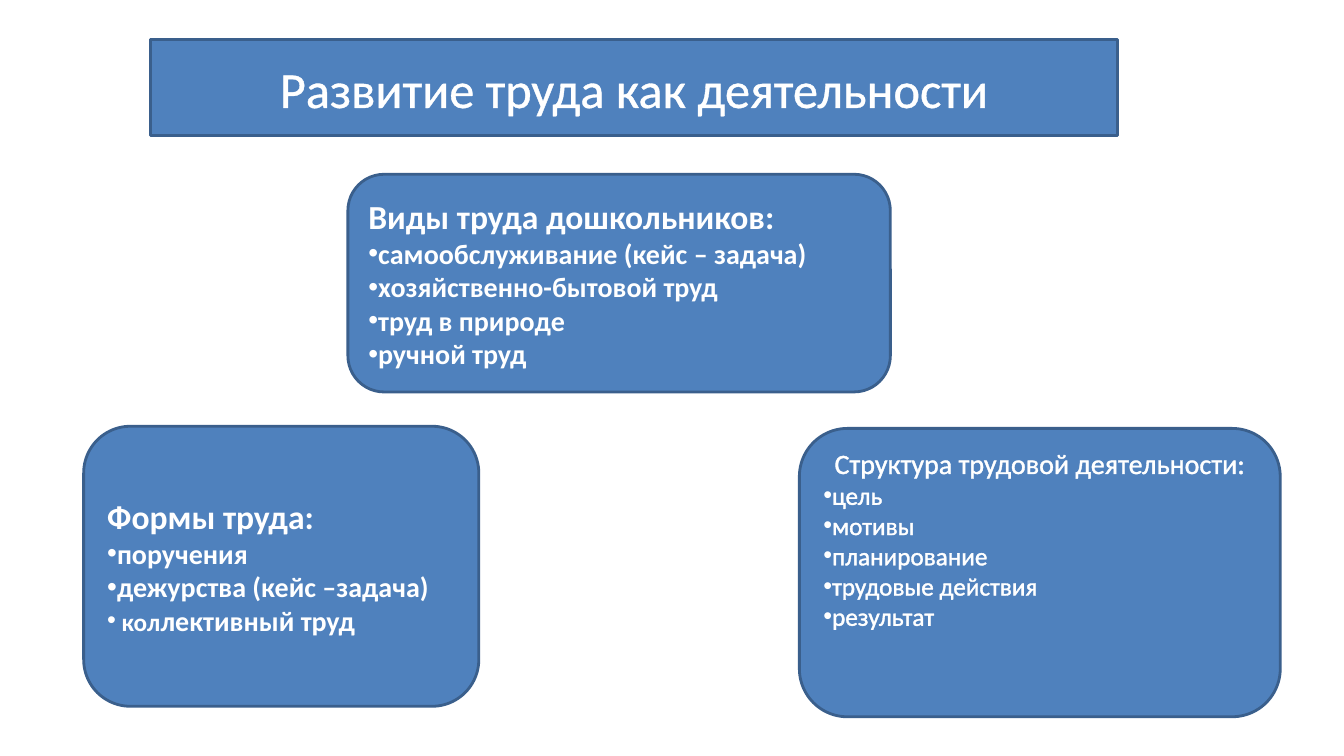
from dataclasses import dataclass

from lxml.etree import SubElement
from pptx import Presentation
from pptx.dml.color import RGBColor
from pptx.enum.shapes import MSO_SHAPE
from pptx.enum.text import MSO_ANCHOR, MSO_AUTO_SIZE, PP_ALIGN
from pptx.oxml import parse_xml
from pptx.oxml.ns import nsdecls, qn
from pptx.util import Pt


@dataclass(frozen=True)
class Theme:
    font: str = "Calibri"
    fill: RGBColor = RGBColor(0x4F, 0x81, 0xBD)
    line: RGBColor = RGBColor(0x3A, 0x5F, 0x8C)
    text: RGBColor = RGBColor(0xFF, 0xFF, 0xFF)
    title: int = 36
    heading: int = 24
    body: int = 20
    small: int = 18


THEME = Theme()


def paint(sp):
    sp.fill.solid()
    sp.fill.fore_color.rgb = THEME.fill
    sp.line.color.rgb = THEME.line
    sp.line.width = Pt(2)


def style(p, size, bold=False, outlined=False, align=PP_ALIGN.LEFT):
    p.alignment = align
    font = p.font
    font.name, font.size, font.bold = THEME.font, Pt(size), bold
    font.color.rgb = THEME.text
    if outlined:
        ln = parse_xml(
            f'<a:ln {nsdecls("a")} w="{Pt(1.45)}"><a:solidFill>'
            f'<a:srgbClr val="{THEME.text}"/></a:solidFill></a:ln>')
        p._p.pPr.find(qn("a:defRPr")).insert(0, ln)


def add_bullet(p):
    pPr = p._p.get_or_add_pPr()
    pPr.insert(0, parse_xml(f'<a:buFont {nsdecls("a")} typeface="Arial"/>'))
    pPr.insert(1, parse_xml(f'<a:buChar {nsdecls("a")} char="•"/>'))


def set_title(s, text, left, top, width, height):
    sp = s.shapes.title
    sp.left, sp.top, sp.width, sp.height = map(Pt, (left, top, width, height))
    geom = SubElement(sp._element.spPr, qn("a:prstGeom"), prst="roundRect")
    SubElement(geom, qn("a:avLst"))
    paint(sp)
    tf = sp.text_frame
    tf.text = text
    tf.word_wrap = True
    tf.auto_size = MSO_AUTO_SIZE.NONE
    tf.vertical_anchor = MSO_ANCHOR.MIDDLE
    style(tf.paragraphs[0], THEME.title, outlined=True, align=PP_ALIGN.CENTER)


def add_card(s, box, heading, items, heading_size, item_size, bold=True,
             outlined=False, align=PP_ALIGN.LEFT, bottom=3.6):
    """An item is a string or a list of (text, size) runs."""
    sp = s.shapes.add_shape(MSO_SHAPE.FLOWCHART_ALTERNATE_PROCESS, *map(Pt, box))
    sp.shadow.inherit = False
    paint(sp)
    tf = sp.text_frame
    tf.word_wrap = True
    tf.vertical_anchor = MSO_ANCHOR.MIDDLE
    tf.margin_bottom = Pt(bottom)
    p = tf.paragraphs[0]
    p.text = heading
    style(p, heading_size, bold, outlined, align)
    for item in items:
        p = tf.add_paragraph()
        style(p, item_size, bold, outlined)
        add_bullet(p)
        runs = [(item, None)] if isinstance(item, str) else item
        for text, size in runs:
            r = p.add_run()
            r.text = text
            if size:
                r.font.size = Pt(size)


def main():
    prs = Presentation()
    prs.slide_width, prs.slide_height = Pt(960), Pt(540)
    s = prs.slides.add_slide(prs.slide_layouts[5])

    # Title banner
    set_title(s, "Развитие труда как деятельности", 107.5, 28.5, 691, 68.5)

    # Kinds of work
    add_card(s, (248.5, 124.5, 387.5, 155.5), "Виды труда дошкольников:",
             ["самообслуживание (кейс – задача)", "хозяйственно-бытовой труд",
              "труд в природе", "ручной труд"],
             THEME.heading, THEME.body)

    # Forms of work
    add_card(s, (59.75, 304.5, 282.25, 200), "Формы труда:",
             ["поручения", "дежурства (кейс –задача)",
              [(" кол", THEME.small), ("лективный труд", THEME.body)]],
             THEME.heading, THEME.body)

    # Structure of work, with free room at the bottom
    add_card(s, (571, 306, 343.5, 206), "Структура трудовой деятельности:",
             ["цель", "мотивы", "планирование", "трудовые действия", "результат"],
             THEME.body, THEME.small, bold=False, outlined=True,
             align=PP_ALIGN.CENTER, bottom=52.4)

    prs.save("out.pptx")


if __name__ == "__main__":
    main()
